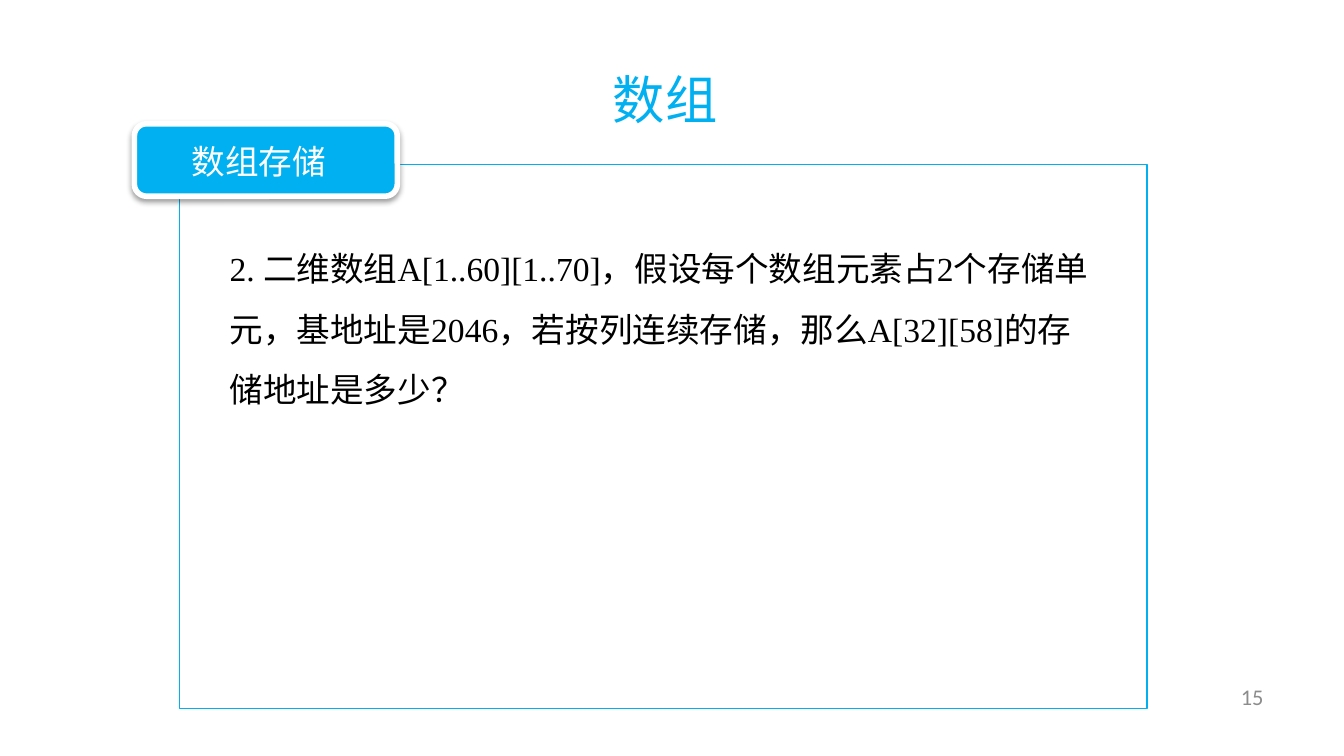
from lxml import etree
from pptx import Presentation, util as u
from pptx.dml.color import RGBColor
from pptx.enum import shapes, text
from pptx.oxml.ns import qn

BLUE, WHITE, BLACK, GRAY = "00B0F0", "FFFFFF", "000000", "8C8C8C"
CJK = "Noto Sans CJK SC"


def paint(color_format, hex_code):
    color_format.rgb = RGBColor.from_string(hex_code)


class LessonSlide:
    def __init__(self, slide):
        self.slide = slide

    def label(self, left, top, width, height, words, size, color, font=CJK,
              align=text.PP_ALIGN.CENTER, anchor=text.MSO_ANCHOR.TOP, spacing=1.0):
        frame = self.slide.shapes.add_textbox(
            u.Cm(left), u.Cm(top), u.Cm(width), u.Cm(height)).text_frame
        frame.word_wrap = True
        frame.vertical_anchor = anchor
        frame.text = words
        line = frame.paragraphs[0]
        line.alignment = align
        line.line_spacing = spacing
        for run in line.runs:
            run.font.name = font
            run.font.size = u.Pt(size)
            paint(run.font.color, color)

    def panel(self, kind, left, top, width, height, fill, border, weight):
        panel = self.slide.shapes.add_shape(
            kind, u.Cm(left), u.Cm(top), u.Cm(width), u.Cm(height))
        panel.shadow.inherit = False
        panel.fill.solid()
        paint(panel.fill.fore_color, fill)
        paint(panel.line.color, border)
        panel.line.width = u.Pt(weight)
        return panel

    def make_translucent(self, panel, percent):
        color = panel._element.spPr.find(qn("a:solidFill"))[0]
        etree.SubElement(color, qn("a:alpha"), val=str(percent * 1000))

    def cast_shadow(self, panel, blur, distance, percent):
        effects = panel._element.spPr.find(qn("a:effectLst"))
        shadow = etree.SubElement(
            effects, qn("a:outerShdw"), blurRad=str(int(u.Pt(blur))),
            dist=str(int(u.Pt(distance))), dir="5400000", rotWithShape="0")
        color = etree.SubElement(shadow, qn("a:srgbClr"), val=BLACK)
        etree.SubElement(color, qn("a:alpha"), val=str(percent * 1000))


def main():
    deck = Presentation()
    deck.slide_width, deck.slide_height = u.Cm(25.4), u.Cm(14.29)
    lesson = LessonSlide(deck.slides.add_slide(deck.slide_layouts[6]))

    lesson.label(18.21, 12.78, 5.92, 0.76, "15", 12, GRAY, "Calibri",
                 text.PP_ALIGN.RIGHT, text.MSO_ANCHOR.MIDDLE)
    lesson.label(8.38, 0.74, 8.38, 1.7, "数组", 28, BLUE, spacing=1.35)

    question_panel = lesson.panel(shapes.MSO_SHAPE.RECTANGLE,
                                  3.39, 3.11, 18.29, 10.28, WHITE, BLUE, 0.75)
    lesson.make_translucent(question_panel, 90)
    topic_tab = lesson.panel(shapes.MSO_SHAPE.ROUNDED_RECTANGLE,
                             2.54, 2.34, 4.97, 1.37, BLUE, WHITE, 3)
    lesson.cast_shadow(topic_tab, 3.1, 1.6, 38)

    lesson.label(2.49, 2.54, 4.8, 1.02, "数组存储", 18, WHITE)
    lesson.label(4.09, 4.19, 16.97, 3.58,
                 "2. 二维数组A[1..60][1..70]，假设每个数组元素占2个存储单元，"
                 "基地址是2046，若按列连续存储，那么A[32][58]的存储地址是多少？",
                 18, BLACK, "Times New Roman", text.PP_ALIGN.LEFT, spacing=1.5)

    deck.save("out.pptx")


if __name__ == "__main__":
    main()
